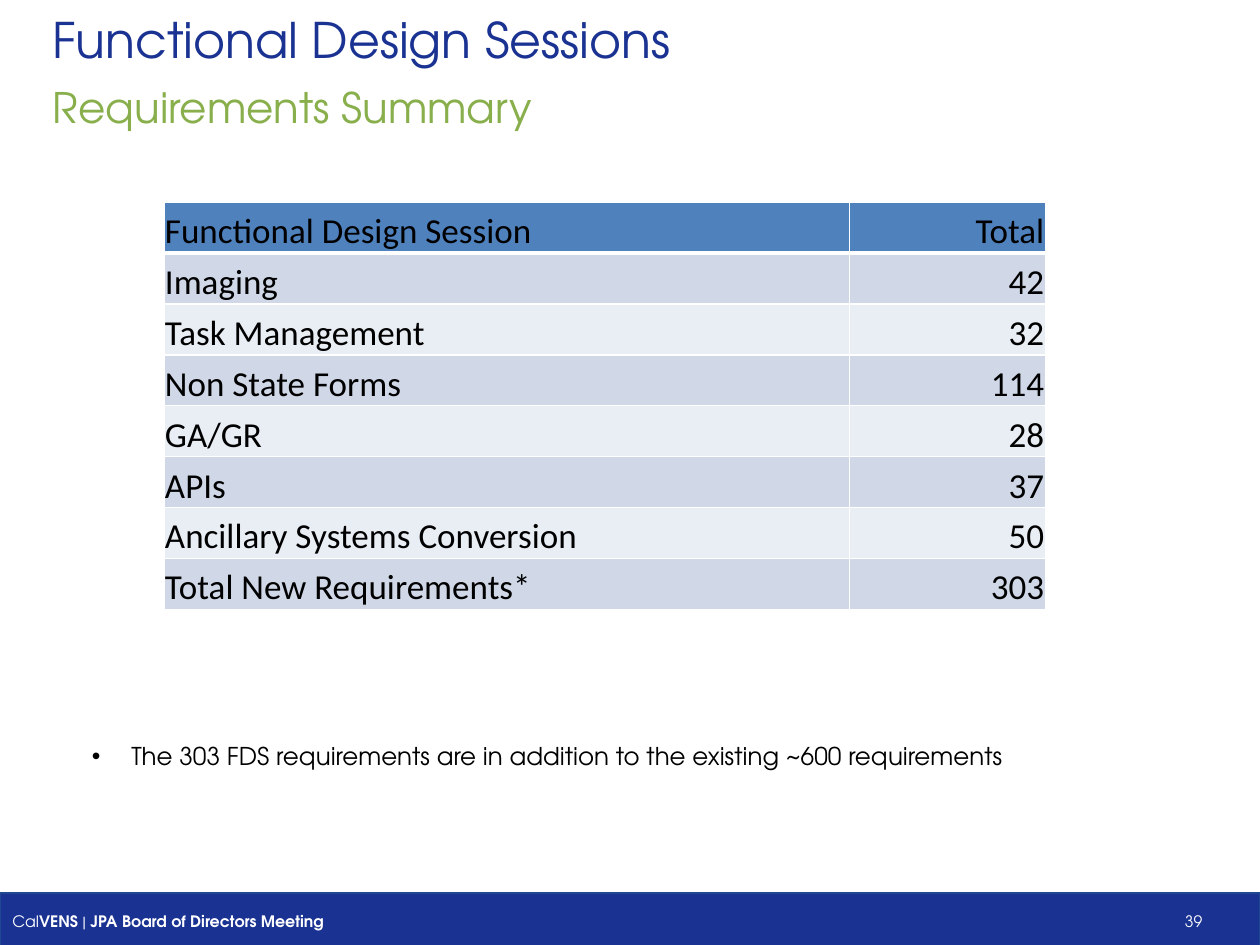
from lxml import etree
from pptx import Presentation
from pptx.dml.color import RGBColor
from pptx.enum.shapes import MSO_SHAPE
from pptx.enum.text import MSO_ANCHOR, PP_ALIGN
from pptx.oxml.ns import qn
from pptx.util import Pt

RECTANGLE = MSO_SHAPE.RECTANGLE
TOP, MIDDLE, BOTTOM = MSO_ANCHOR.TOP, MSO_ANCHOR.MIDDLE, MSO_ANCHOR.BOTTOM
LEFT, RIGHT = PP_ALIGN.LEFT, PP_ALIGN.RIGHT
HEADING_FONT, TABLE_FONT = "TeX Gyre Adventor", "Calibri"
COLORS = {
    "navy": "1A3292", "navy line": "204792", "green": "88AF4B",
    "white": "FFFFFF", "black": "000000",
    "header": "4F81BD", "dark band": "D0D8E8", "light band": "E9EDF4",
}


def add_span(para, text, size, color, font=HEADING_FONT, bold=False):
    span = para.add_run()
    span.text = text
    span.font.size = Pt(size)
    span.font.name = font
    span.font.bold = bold
    span.font.color.rgb = RGBColor.from_string(COLORS[color])


def add_text(page, bounds, text, size, color, anchor=TOP):
    box = page.shapes.add_textbox(*map(Pt, bounds))
    box.text_frame.word_wrap = True
    box.text_frame.vertical_anchor = anchor
    para = box.text_frame.paragraphs[0]
    add_span(para, text, size, color)
    return para


deck = Presentation()
deck.slide_width, deck.slide_height = Pt(720), Pt(540)
page = deck.slides.add_slide(deck.slide_layouts[6])

# Footer bar with tab stops for the page number
footer = page.shapes.add_shape(RECTANGLE, Pt(0), Pt(510.2), Pt(720), Pt(32.4))
footer.shadow.inherit = False
footer.fill.solid()
footer.fill.fore_color.rgb = RGBColor.from_string(COLORS["navy"])
footer.line.color.rgb = RGBColor.from_string(COLORS["navy line"])
footer.line.width = Pt(0.75)
footer.text_frame.word_wrap = True
footer.text_frame.vertical_anchor = MIDDLE
para = footer.text_frame.paragraphs[0]
para.alignment = LEFT
tabs = etree.SubElement(para._p.get_or_add_pPr(), qn("a:tabLst"))
for position, side in ((337.5, "l"), (680, "r")):
    etree.SubElement(tabs, qn("a:tab"), pos=str(Pt(position)), algn=side)
for text, bold in (("Cal", False), ("VENS", True), (" | ", False),
                   ("JPA Board of Directors Meeting\t\t", True), ("39", False)):
    add_span(para, text, 9, "white", bold=bold)

# Title and subtitle
add_text(page, (23, 0.7, 678, 42.5), "Functional Design Sessions", 28, "navy", MIDDLE)
subtitle = add_text(page, (23, 43.2, 678, 40.3), "Requirements Summary", 24, "green")
subtitle.space_before = Pt(4.8)

# Requirements table
rows = [
    ("Functional Design Session", "Total"),
    ("Imaging", "42"),
    ("Task Management", "32"),
    ("Non State Forms", "114"),
    ("GA/GR", "28"),
    ("APIs", "37"),
    ("Ancillary Systems Conversion", "50"),
    ("Total New Requirements*", "303"),
]
widths, row_height = (391.8, 112), 29.1
table = page.shapes.add_table(len(rows), len(widths), Pt(93.6), Pt(115.5),
                              Pt(sum(widths)), Pt(row_height * len(rows))).table
for column, width in zip(table.columns, widths):
    column.width = Pt(width)
for r, values in enumerate(rows):
    table.rows[r].height = Pt(row_height)
    band = "header" if r == 0 else ("dark band" if r % 2 else "light band")
    for c, value in enumerate(values):
        cell = table.cell(r, c)
        cell.margin_left = cell.margin_right = cell.margin_top = Pt(0.7)
        cell.margin_bottom = Pt(0)
        cell.vertical_anchor = BOTTOM
        para = cell.text_frame.paragraphs[0]
        para.alignment = RIGHT if c else LEFT
        add_span(para, value, 20, "black", TABLE_FONT)
        # White borders, thicker between the header and the body
        properties = cell._tc.get_or_add_tcPr()
        for edge in ("lnL", "lnR", "lnT", "lnB"):
            thick = (r, edge) in ((0, "lnB"), (1, "lnT"))
            line = etree.SubElement(properties, qn("a:" + edge), w=str(Pt(3 if thick else 1)))
            fill = etree.SubElement(line, qn("a:solidFill"))
            etree.SubElement(fill, qn("a:srgbClr"), val=COLORS["white"])
        cell.fill.solid()
        cell.fill.fore_color.rgb = RGBColor.from_string(COLORS[band])

# Bulleted note
note = add_text(page, (45.4, 419.8, 581.8, 41),
                "The 303 FDS requirements are in addition to the existing ~600 requirements",
                14, "black")
properties = note._p.get_or_add_pPr()
properties.set("marL", str(Pt(22.5)))
properties.set("indent", str(-Pt(22.5)))
etree.SubElement(properties, qn("a:buFont"), typeface="Arial")
etree.SubElement(properties, qn("a:buChar"), char="•")

deck.save("out.pptx")
